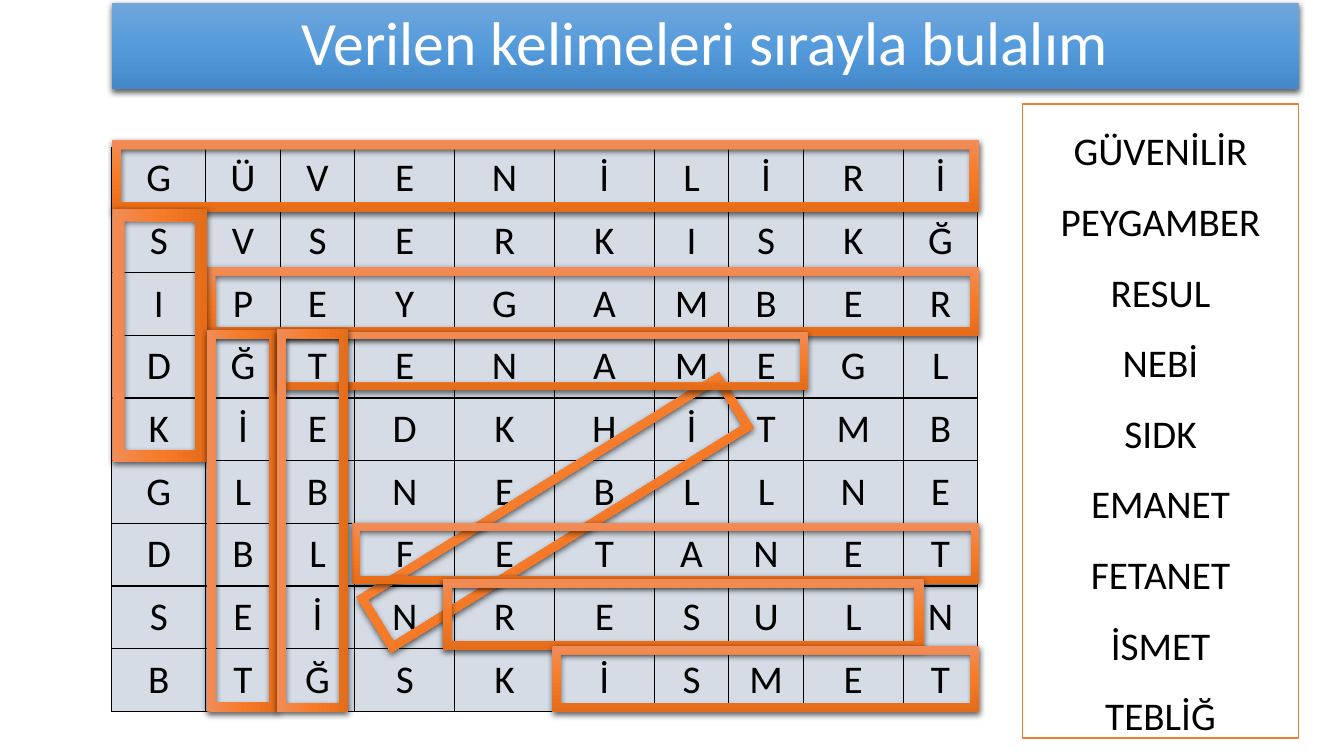
import pptx
import pptx.dml.color
import pptx.enum.shapes
import pptx.enum.text
import pptx.oxml
import pptx.oxml.ns
import pptx.util
from pptx.util import Inches

RGBColor = pptx.dml.color.RGBColor
SHAPE = pptx.enum.shapes.MSO_SHAPE
ANCHOR = pptx.enum.text.MSO_ANCHOR
NS = pptx.oxml.ns.nsdecls("a")

FONT = "Calibri"
BLACK = RGBColor(0x00, 0x00, 0x00)
WHITE = RGBColor(0xFF, 0xFF, 0xFF)
CELL_FILL = RGBColor(0xD6, 0xDC, 0xE5)
ORANGE = RGBColor(0xED, 0x7D, 0x31)
BLUES = [RGBColor(0x71, 0xA6, 0xDB), RGBColor(0x55, 0x9B, 0xDB), RGBColor(0x44, 0x8A, 0xCA)]
ORANGES = [RGBColor(0xF1, 0x8C, 0x57), RGBColor(0xF6, 0x7B, 0x28), RGBColor(0xE5, 0x6C, 0x19)]

TITLE = "Verilen kelimeleri sırayla bulalım"
WORDS = ["GÜVENİLİR", "PEYGAMBER", "RESUL", "NEBİ", "SIDK",
         "EMANET", "FETANET", "İSMET", "TEBLİĞ"]
LETTERS = ["GÜVENİLİRİ", "SVSERKISKĞ", "IPEYGAMBER", "DĞTENAMEGL", "KİEDKHİTMB",
           "GLBNEBLLNE", "DBLFETANET", "SEİNRESULN", "BTĞSKİSMET"]
FIRST, NARROW, WIDE = 0.93, 0.74, 0.99
COLUMNS = [FIRST, NARROW, NARROW, WIDE, WIDE, WIDE, NARROW, NARROW, WIDE, NARROW]
GRID_HEIGHT = 5.6

NEBI_FRAME = (3.39, 4.76, 4.23, 0.65, 328.2)
WORD_FRAMES = [
    (1.11, 1.39, 8.6, 0.71, 0),
    (2.05, 2.65, 7.66, 0.68, 0),
    (3.49, 5.19, 6.22, 0.6, 0),
    (0.33, 2.86, 2.51, 0.94, 270),
    (0.51, 4.81, 3.79, 0.71, 270),
    (2.76, 3.29, 5.25, 0.58, 0),
    (4.39, 5.74, 4.77, 0.71, 0),
    (5.48, 6.41, 4.23, 0.65, 0),
    (1.2, 4.81, 3.8, 0.71, 270),
]


def write_text(tf, text, size, color, spacing):
    """Fill a text frame with centred paragraphs in one style."""
    tf.text = text
    for p in tf.paragraphs:
        p.alignment = pptx.enum.text.PP_ALIGN.CENTER
        p.line_spacing = spacing
        for r in p.runs:
            r.font.name = FONT
            r.font.size = pptx.util.Pt(size)
            r.font.color.rgb = color


def add_box(s, kind, left, top, width, height):
    """Add a preset shape without the theme shadow."""
    sp = s.shapes.add_shape(kind, Inches(left), Inches(top), Inches(width), Inches(height))
    sp.shadow.inherit = False
    sp.text_frame.word_wrap = True
    sp.text_frame.vertical_anchor = ANCHOR.MIDDLE
    return sp


def add_raised_box(s, kind, left, top, width, height, colors):
    """Add a shape with a vertical gradient, no outline and a soft shadow."""
    sp = add_box(s, kind, left, top, width, height)
    sp.line.fill.background()
    sp.fill.gradient()
    sp.fill.gradient_angle = 270
    props = sp._element.spPr
    stops = props.find(".//" + pptx.oxml.ns.qn("a:gsLst"))
    stops.clear()
    for position, color in zip((0, 50000, 100000), colors):
        stops.append(pptx.oxml.parse_xml(
            f'<a:gs {NS} pos="{position}"><a:srgbClr val="{color}"/></a:gs>'))
    props.find(pptx.oxml.ns.qn("a:effectLst")).append(pptx.oxml.parse_xml(
        f'<a:outerShdw {NS} blurRad="57150" dist="19050" dir="5400000" algn="ctr" '
        'rotWithShape="0"><a:srgbClr val="000000"><a:alpha val="63000"/>'
        '</a:srgbClr></a:outerShdw>'))
    return sp


def add_frame(s, left, top, width, height, rotation):
    """Add an orange frame around a found word."""
    sp = add_raised_box(s, SHAPE.FRAME, left, top, width, height, ORANGES)
    sp.rotation = rotation


def add_borders(cell):
    """Draw a thin black line on each side of a cell."""
    for side in ("lnL", "lnR", "lnT", "lnB"):
        cell._tc.get_or_add_tcPr().append(pptx.oxml.parse_xml(
            f'<a:{side} {NS} w="12700"><a:solidFill><a:srgbClr val="{BLACK}"/>'
            f'</a:solidFill></a:{side}>'))


def add_letter_grid(s):
    """Add the table of puzzle letters."""
    table = s.shapes.add_table(len(LETTERS), len(COLUMNS), Inches(1.11), Inches(1.46),
                               Inches(sum(COLUMNS)), Inches(GRID_HEIGHT)).table
    table.first_row = False
    table.horz_banding = False
    for column, width in zip(table.columns, COLUMNS):
        column.width = Inches(width)
    for row, letters in zip(table.rows, LETTERS):
        row.height = Inches(GRID_HEIGHT / len(LETTERS))
        for cell, letter in zip(row.cells, letters):
            cell.margin_left = cell.margin_right = Inches(0.07)
            cell.margin_top = cell.margin_bottom = 0
            add_borders(cell)
            cell.fill.solid()
            cell.fill.fore_color.rgb = CELL_FILL
            write_text(cell.text_frame, letter, 28, BLACK, 1.15)


def add_word_list(s):
    """Add the outlined panel that lists the words to find."""
    sp = add_box(s, SHAPE.RECTANGLE, 10.14, 1.03, 2.74, 6.29)
    sp.fill.solid()
    sp.fill.fore_color.rgb = WHITE
    sp.line.color.rgb = ORANGE
    sp.line.width = pptx.util.Pt(1)
    write_text(sp.text_frame, "\n".join(WORDS), 28, BLACK, 1.5)


def main():
    """Build the word search slide."""
    prs = pptx.Presentation()
    prs.slide_width = Inches(13.33)
    prs.slide_height = Inches(7.5)
    s = prs.slides.add_slide(prs.slide_layouts[6])
    title = add_raised_box(s, SHAPE.RECTANGLE, 1.11, 0.03, 11.77, 0.85, BLUES)
    write_text(title.text_frame, TITLE, 44, WHITE, 0.9)
    add_letter_grid(s)
    add_frame(s, *NEBI_FRAME)
    add_word_list(s)
    for frame in WORD_FRAMES:
        add_frame(s, *frame)
    prs.save("out.pptx")


if __name__ == "__main__":
    main()
